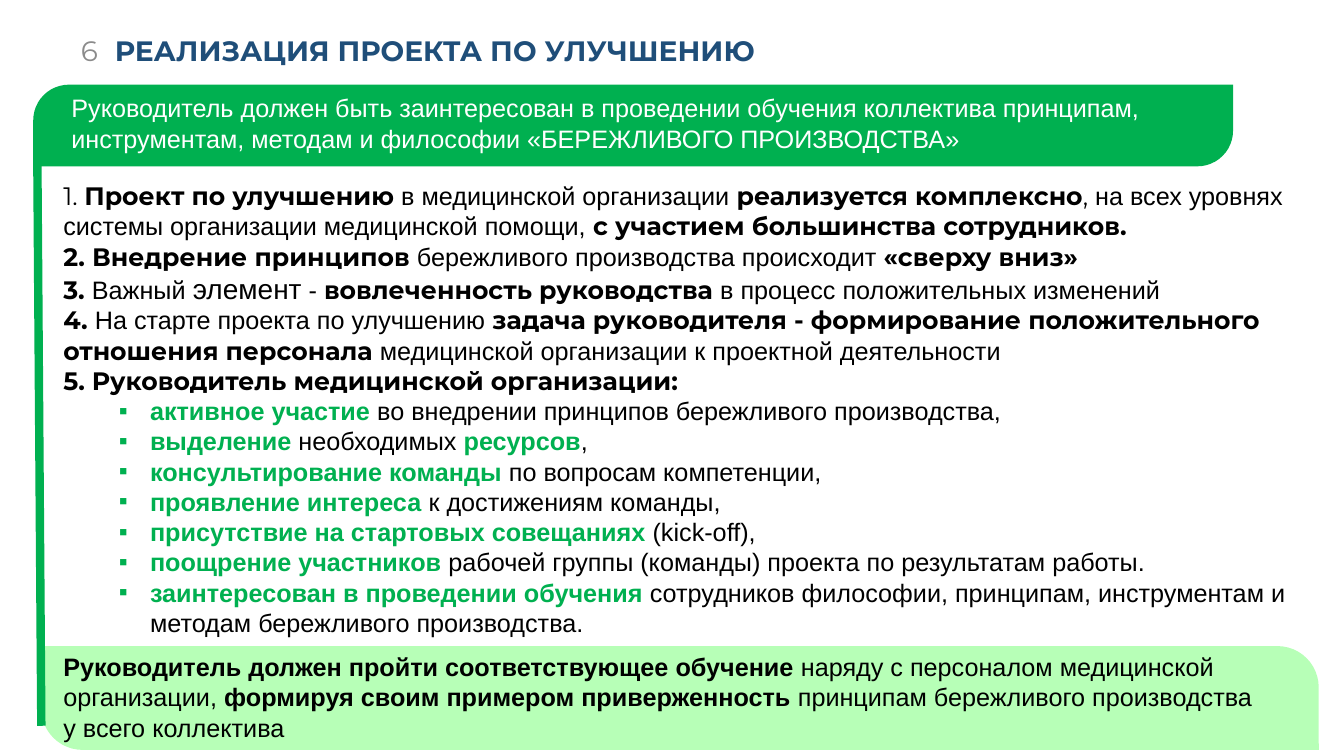
from dataclasses import dataclass

from lxml import etree
from pptx import Presentation
from pptx.dml.color import RGBColor
from pptx.enum.shapes import MSO_CONNECTOR, MSO_SHAPE
from pptx.enum.text import MSO_ANCHOR, MSO_AUTO_SIZE, PP_ALIGN
from pptx.oxml.ns import qn
from pptx.util import Inches, Pt

DIAGONAL_ROUND = MSO_SHAPE.ROUND_2_DIAG_RECTANGLE
STRAIGHT = MSO_CONNECTOR.STRAIGHT
MIDDLE, TOP = MSO_ANCHOR.MIDDLE, MSO_ANCHOR.TOP
LEFT, RIGHT = PP_ALIGN.LEFT, PP_ALIGN.RIGHT
GROW = MSO_AUTO_SIZE.SHAPE_TO_FIT_TEXT


@dataclass(frozen=True)
class Theme:
    green: RGBColor = RGBColor(0x00, 0xB0, 0x50)
    pale_green: RGBColor = RGBColor(0xB7, 0xFF, 0xB7)
    navy: RGBColor = RGBColor(0x1F, 0x4E, 0x79)
    gray: RGBColor = RGBColor(0x8B, 0x8B, 0x8B)
    black: RGBColor = RGBColor(0x00, 0x00, 0x00)
    white: RGBColor = RGBColor(0xFF, 0xFF, 0xFF)
    heading_font: str = "Montserrat"
    body_font: str = "Arial"
    heading_size: int = 20
    body_size: int = 18


THEME = Theme()

# Span styles: overrides of the paragraph font
PLAIN = {}
BOLD = {"bold": True}
LARGE = {"size": Pt(THEME.heading_size)}
HEAD = {"name": THEME.heading_font}
HEAD_BOLD = {**HEAD, **BOLD}
ACCENT = {**BOLD, "color": THEME.green}

STEPS = [
    [(" ", HEAD), ("Проект по улучшению ", HEAD_BOLD),
     ("в медицинской организации ", PLAIN),
     ("реализуется комплексно", HEAD_BOLD), (",", HEAD),
     (" на всех уровнях системы организации медицинской помощи, ", PLAIN),
     ("с участием большинства сотрудников.", HEAD_BOLD)],
    [(" Внедрение принципов ", HEAD_BOLD),
     ("бережливого производства происходит ", PLAIN),
     ("«сверху вниз»", HEAD_BOLD)],
    [(" ", HEAD_BOLD), ("Важный ", PLAIN), ("элемент", LARGE), (" - ", PLAIN),
     ("вовлеченность руководства ", HEAD_BOLD),
     ("в процесс положительных изменений", PLAIN)],
    [(" ", HEAD_BOLD), ("На старте проекта по улучшению ", PLAIN),
     ("задача руководителя - формирование положительного отношения персонала ", HEAD_BOLD),
     ("медицинской организации к проектной деятельности", PLAIN)],
    [(" Руководитель медицинской организации:", HEAD_BOLD)],
]
DUTIES = [
    [("активное участие ", ACCENT),
     ("во внедрении принципов бережливого производства,", PLAIN)],
    [("выделение", ACCENT), (" необходимых ", PLAIN), ("ресурсов", ACCENT), (",", PLAIN)],
    [("консультирование команды ", ACCENT), ("по вопросам компетенции,", PLAIN)],
    [("проявление интереса ", ACCENT), ("к достижениям команды,", PLAIN)],
    [("присутствие на стартовых совещаниях ", ACCENT), ("(kick-off),", PLAIN)],
    [("поощрение участников ", ACCENT),
     ("рабочей группы (команды) проекта по результатам работы.", PLAIN)],
    [("заинтересован в проведении обучения ", ACCENT),
     ("сотрудников философии, принципам, инструментам и методам "
      "бережливого производства.", PLAIN)],
]
CONCLUSION = [
    ("Руководитель должен пройти соответствующее обучение", BOLD),
    (" наряду с персоналом медицинской организации, ", PLAIN),
    ("формируя своим примером приверженность ", BOLD),
    ("принципам бережливого производства \nу всего коллектива", PLAIN),
]


def set_font(font, name=None, size=None, color=None, bold=None):
    if name:
        font.name = name
    if size:
        font.size = size
    if color is not None:
        font.color.rgb = color
    if bold is not None:
        font.bold = bold


def add_frame(page, box, anchor=TOP):
    frame = page.shapes.add_textbox(*map(Inches, box)).text_frame
    frame.word_wrap = True
    frame.vertical_anchor = anchor
    return frame


def add_label(page, box, text, anchor=TOP, align=LEFT, **font):
    """Add a text box holding one uniformly formatted paragraph."""
    para = add_frame(page, box, anchor).paragraphs[0]
    para.text = text
    para.alignment = align
    set_font(para.font, **font)
    return para


def add_panel(page, box, color, corners):
    panel = page.shapes.add_shape(DIAGONAL_ROUND, *map(Inches, box))
    panel.shadow.inherit = False
    panel.fill.solid()
    panel.fill.fore_color.rgb = color
    panel.line.fill.background()
    for index, corner in enumerate(corners):
        panel.adjustments[index] = corner


def number_paragraph(para):
    props = para._p.get_or_add_pPr()
    props.set("marL", "0")
    props.set("indent", "0")
    etree.SubElement(props, qn("a:buFont"), typeface="+mj-lt")
    etree.SubElement(props, qn("a:buAutoNum"), type="arabicPeriod")


def bullet_paragraph(para):
    props = para._p.get_or_add_pPr()
    props.set("marL", str(Inches(0.86)))
    props.set("indent", str(Inches(-0.31)))
    color = etree.SubElement(props, qn("a:buClr"))
    etree.SubElement(color, qn("a:srgbClr"), val=str(THEME.green))
    etree.SubElement(props, qn("a:buFont"), typeface=THEME.body_font)
    etree.SubElement(props, qn("a:buChar"), char="▪")


def fill_paragraph(para, spans):
    set_font(para.font, THEME.body_font, Pt(THEME.body_size), THEME.black)
    for text, style in spans:
        for index, line in enumerate(text.split("\n")):
            if index:
                para.add_line_break()
            span = para.add_run()
            span.text = line
            set_font(span.font, **style)


def add_header(page, box):
    """Place the slide number and the title side by side."""
    left, top, width, height = box
    number_width = 1.07
    font = {"name": THEME.heading_font, "size": Pt(THEME.heading_size)}
    add_label(page, (left, top, number_width, height), "6", MIDDLE, RIGHT,
              color=THEME.gray, **font)
    title = add_label(page, (left + 1.04, top + 0.02, width - 1.04, height),
                      "РЕАЛИЗАЦИЯ ПРОЕКТА ПО УЛУЧШЕНИЮ", MIDDLE,
                      color=THEME.navy, bold=True, **font)
    title.line_spacing = 0.9


def add_banner(page, box):
    left, top, width, height = box
    add_panel(page, box, THEME.green, (0.437, 0))
    add_label(page, (left + 0.28, top + 0.03, width, height - 0.05),
              "Руководитель должен быть заинтересован в проведении обучения "
              "коллектива принципам, инструментам, методам и философии "
              "«БЕРЕЖЛИВОГО ПРОИЗВОДСТВА»",
              name=THEME.body_font, size=Pt(THEME.body_size), color=THEME.white)


def add_side_rule(page, box):
    left, top, width, height = box
    rule = page.shapes.add_connector(
        STRAIGHT, *map(Inches, (left, top, left + width, top + height)))
    rule.line.color.rgb = THEME.green
    rule.line.width = Pt(6)
    etree.SubElement(rule._element.spPr, qn("a:effectLst"))


def add_body(page, box):
    """Place the numbered steps, the bulleted duties and the conclusion."""
    frame = add_frame(page, box)
    frame.auto_size = GROW
    for index, spans in enumerate(STEPS):
        para = frame.add_paragraph() if index else frame.paragraphs[0]
        number_paragraph(para)
        fill_paragraph(para, spans)
    for spans in DUTIES:
        para = frame.add_paragraph()
        bullet_paragraph(para)
        fill_paragraph(para, spans)
    para = frame.add_paragraph()
    para.space_before = Pt(10)
    fill_paragraph(para, CONCLUSION)


def main():
    deck = Presentation()
    deck.slide_width, deck.slide_height = Inches(13.33), Inches(7.5)
    page = deck.slides.add_slide(deck.slide_layouts[6])
    add_panel(page, (0.41, 6.41, 12.67, 1.03), THEME.pale_green, (0, 0.398))
    add_banner(page, (0.33, 0.84, 11.9, 0.81))
    add_side_rule(page, (0.37, 1.49, 0.04, 5.71))
    add_header(page, (0, 0.23, 12.08, 0.54))
    add_body(page, (0.53, 1.74, 12.54, 5.89))
    deck.save("out.pptx")


if __name__ == "__main__":
    main()
